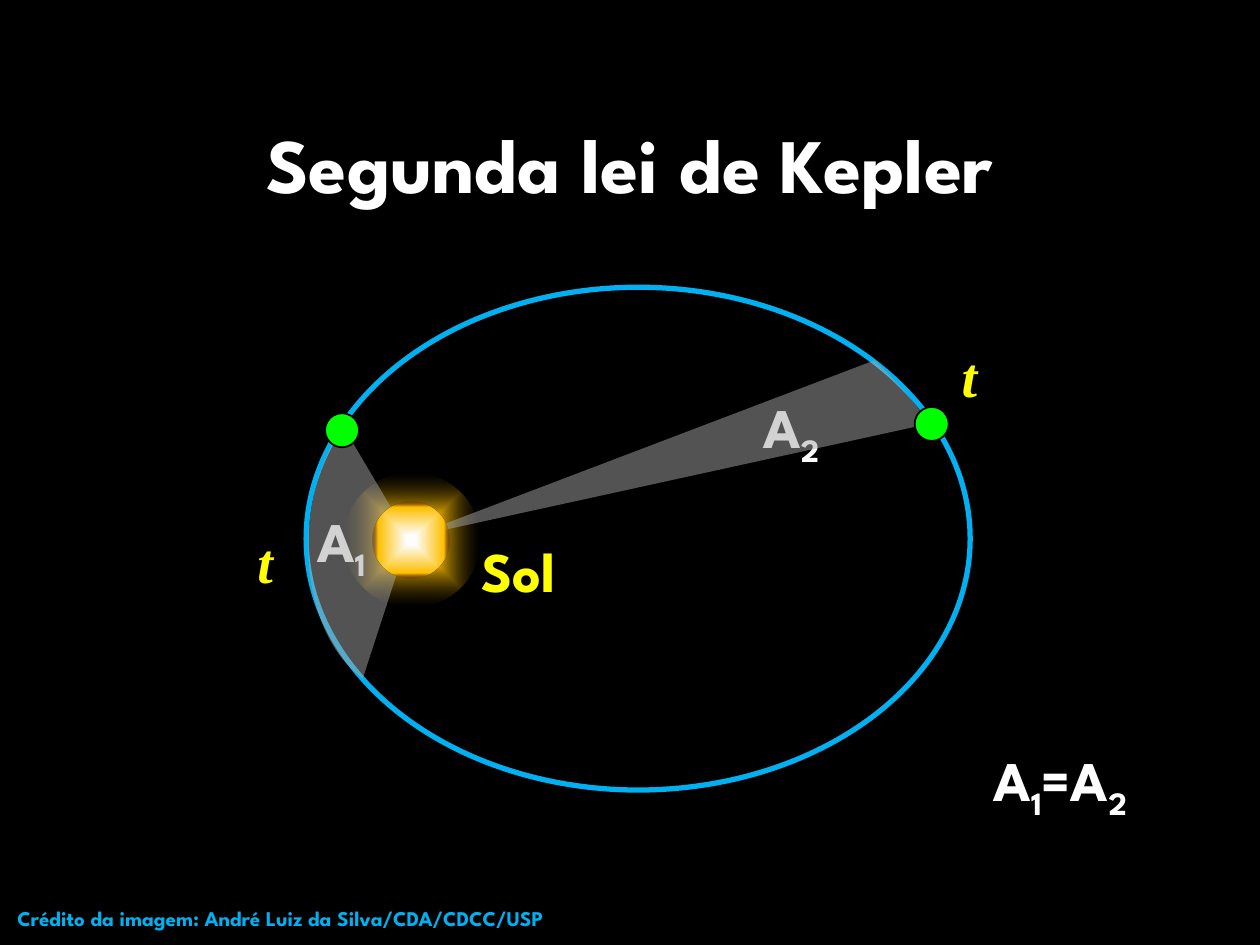
from pptx import Presentation
from pptx import util as u
from pptx.dml import color as dml
from pptx.enum import shapes, text
from pptx.oxml import parse_xml
from pptx.oxml import ns

COLORS = {
    "space": "000000",
    "white": "FFFFFF",
    "yellow": "FFFF00",
    "orbit": "00B0F0",
    "planet": "00FF00",
    "area": "A6A6A6",
    "gold": "FFC000",
    "ember": "4D0808",
}
HEADING = "League Spartan"
SYMBOL = "Times New Roman"
OVAL = shapes.MSO_SHAPE.OVAL
ARC = shapes.MSO_SHAPE.ARC


def rgb(name):
    return dml.RGBColor.from_string(COLORS[name])


def add_runs(p, parts, size, color, font=HEADING, italic=None):
    for content, subscript in parts:
        r = p.add_run()
        r.text = content
        r.font.name = font
        r.font.size = u.Pt(size)
        r.font.bold = True
        r.font.italic = italic
        r.font.color.rgb = rgb(color)
        if subscript:
            r._r.get_or_add_rPr().set("baseline", "-25000")


def add_label(s, box, parts, color="white", size=32, wrap=False,
              align=text.PP_ALIGN.CENTER, **style):
    tf = s.shapes.add_textbox(*map(u.Inches, box)).text_frame
    tf.word_wrap = wrap
    tf.auto_size = text.MSO_AUTO_SIZE.SHAPE_TO_FIT_TEXT
    p = tf.paragraphs[0]
    p.alignment = align
    add_runs(p, parts, size, color, **style)


def add_figure(s, kind, box, fill=None, line=None, width=1):
    sp = s.shapes.add_shape(kind, *map(u.Inches, box))
    sp.shadow.inherit = False
    if fill:
        sp.fill.solid()
        sp.fill.fore_color.rgb = rgb(fill)
    else:
        sp.fill.background()
    if line:
        sp.line.color.rgb = rgb(line)
        sp.line.width = u.Pt(width)
    else:
        sp.line.fill.background()
    return sp


def add_glow(s, box, stops):
    sp = add_figure(s, OVAL, box)
    gradient = "".join(
        f'<a:gs pos="{pos * 1000}"><a:srgbClr val="{COLORS[name]}">'
        f'<a:alpha val="{alpha * 1000}"/></a:srgbClr></a:gs>'
        for pos, name, alpha in stops)
    fill = parse_xml(
        f'<a:gradFill {ns.nsdecls("a")} rotWithShape="1"><a:gsLst>{gradient}</a:gsLst>'
        '<a:path path="shape"><a:fillToRect l="50000" t="50000" r="50000" b="50000"/>'
        '</a:path></a:gradFill>')
    old = sp._element.spPr.find(ns.qn("a:noFill"))
    old.getparent().replace(old, fill)


def add_area(s, box, rotation, angles, flip=False):
    sp = add_figure(s, ARC, box, "area")
    sp.rotation = rotation
    for i, angle in enumerate(angles):
        sp.adjustments[i] = angle * 0.6
    spPr = sp._element.spPr
    if flip:
        spPr.find(ns.qn("a:xfrm")).set("flipH", "1")
    clr = spPr.find(ns.qn("a:solidFill")).find(ns.qn("a:srgbClr"))
    clr.append(parse_xml(f'<a:alpha {ns.nsdecls("a")} val="50000"/>'))


def add_title(s, left, top, width, height):
    sp = s.shapes.title
    sp.left, sp.top, sp.width, sp.height = map(u.Inches, (left, top, width, height))
    tf = sp.text_frame
    tf.word_wrap = True
    tf.vertical_anchor = text.MSO_ANCHOR.MIDDLE
    p = tf.paragraphs[0]
    p.alignment = text.PP_ALIGN.CENTER
    add_runs(p, [("Segunda lei de Kepler", False)], 44, "white")


def add_orbit(s, left, top, width, height):
    def at(x, y, w, h):
        return left + x, top + y, w, h

    a1 = [("A", False), ("1", True)]
    a2 = [("A", False), ("2", True)]

    add_glow(s, at(0.3, 1.47, 1.08, 1.07),
             [(7, "white", 100), (32, "gold", 100), (100, "space", 23)])
    add_figure(s, OVAL, at(0, 0, width, height), line="orbit", width=3)

    add_label(s, at(3.5, 0.79, 0.7, 0.64), a2)
    add_label(s, at(5.25, 3.59, 1.47, 0.64), a1 + [("=A", False), ("2", True)])
    for x, y in [(5.1, 0.38), (-0.49, 1.86)]:
        add_label(s, at(x, y, 0.33, 0.64), [("t", False)], "yellow",
                  font=SYMBOL, italic=True)
    add_label(s, at(1.13, 1.93, 1.11, 0.64), [("Sol", False)], "yellow", wrap=True)
    add_label(s, at(-0.07, 1.69, 0.7, 0.64), a1)

    add_area(s, at(0.02, 0.76, 1.59, 2.45), 3.7, (304.3, 75.66), flip=True)
    add_area(s, at(-3.76, -0.84, 9.13, 5.66), 6, (333.17, 341.65))

    add_glow(s, at(0.53, 1.7, 0.61, 0.61),
             [(12, "white", 100), (85, "gold", 100), (100, "ember", 17)])
    for x, y in [(0.15, 1), (4.83, 0.95)]:
        add_figure(s, OVAL, at(x, y, 0.27, 0.27), "planet", "space")


def add_credit(s, *box):
    add_label(s, box, [("Crédito da imagem: André Luiz da Silva/CDA/CDCC/USP", False)],
              "orbit", 12, wrap=True, align=text.PP_ALIGN.LEFT)


def main():
    prs = Presentation()
    prs.slide_width, prs.slide_height = u.Inches(10), u.Inches(7.5)
    s = prs.slides.add_slide(prs.slide_layouts[5])
    s.background.fill.solid()
    s.background.fill.fore_color.rgb = rgb("space")
    add_title(s, 0.75, 0.67, 8.5, 1.25)
    add_orbit(s, 2.43, 2.28, 5.27, 3.99)
    add_credit(s, 0.04, 7.14, 5.28, 0.3)
    prs.save("out.pptx")


if __name__ == "__main__":
    main()
